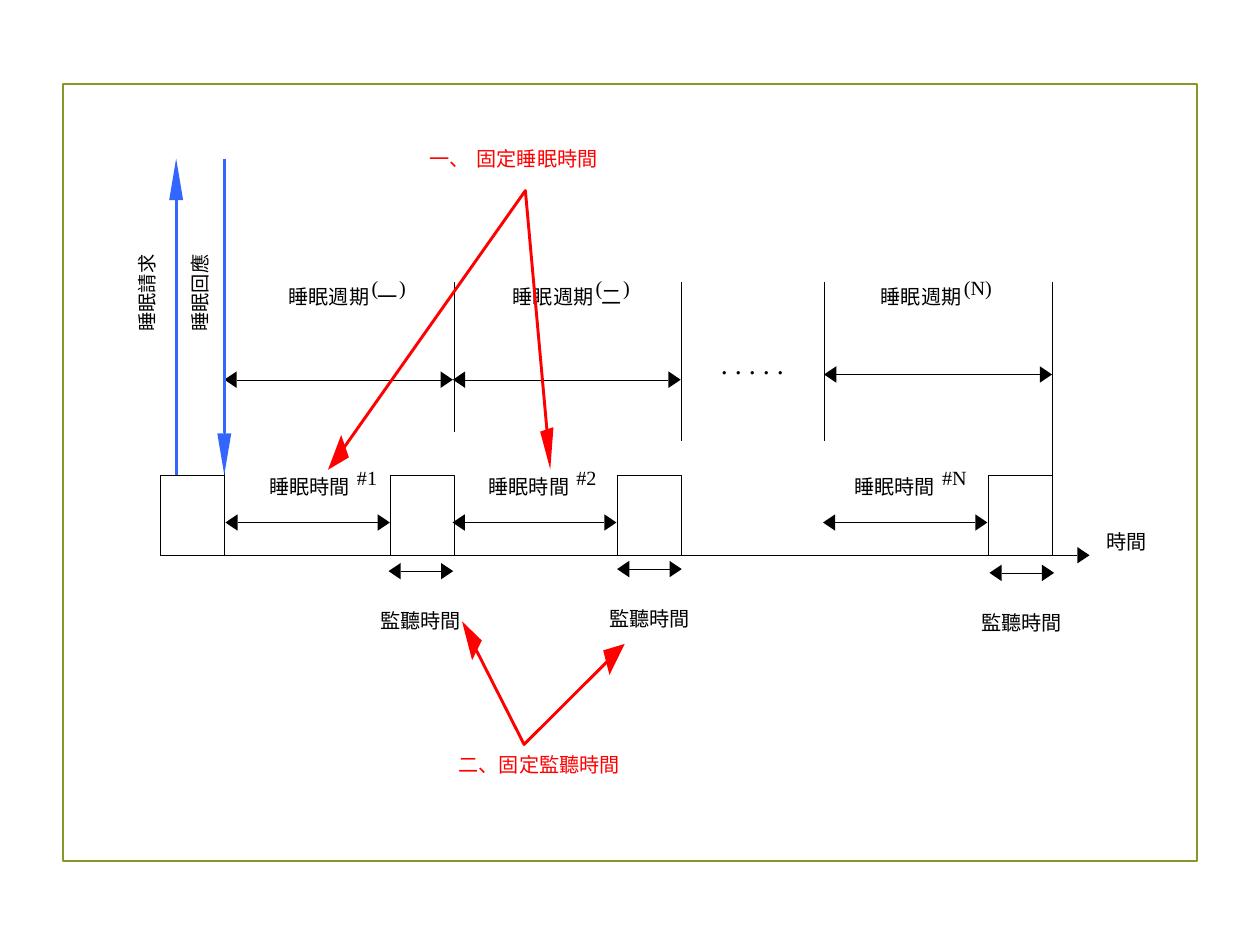
import math

import pptx
import pptx.dml.color
import pptx.enum.shapes
import pptx.oxml
import pptx.oxml.ns
import pptx.util

BLACK = "000000"
RED = "FF0000"
BLUE = "3366FF"
OLIVE = "83992A"
HAIRLINE = 0.19
BOLD_LINE = 1.67
CJK_FONT = "Calibri"
LATIN_FONT = "Times New Roman"


def pt(value):
    return pptx.util.Pt(value)


def rgb(color):
    return pptx.dml.color.RGBColor.from_string(color)


def add_outline_box(slide, left, top, width, height, color, weight):
    rectangle = pptx.enum.shapes.MSO_SHAPE.RECTANGLE
    box = slide.shapes.add_shape(rectangle, pt(left), pt(top), pt(width), pt(height))
    box.shadow.inherit = False
    box.fill.background()
    box.line.color.rgb = rgb(color)
    box.line.width = pt(weight)


def add_line(slide, start, end, color=BLACK, weight=HAIRLINE):
    straight = pptx.enum.shapes.MSO_CONNECTOR.STRAIGHT
    line = slide.shapes.add_connector(straight, *[pt(v) for v in (*start, *end)])
    line.line.color.rgb = rgb(color)
    line.line.width = pt(weight)
    line._element.spPr.append(
        pptx.oxml.parse_xml("<a:effectLst %s/>" % pptx.oxml.ns.nsdecls("a")))


def add_outline(slide, points, color, closed):
    corners = [(pt(x), pt(y)) for x, y in points]
    builder = slide.shapes.build_freeform(*corners[0], scale=1.0)
    builder.add_line_segments(corners[1:], close=closed)
    outline = builder.convert_to_shape()
    outline.shadow.inherit = False
    if closed:
        outline.fill.solid()
        outline.fill.fore_color.rgb = rgb(color)
        outline.line.fill.background()
    else:
        outline.fill.background()
        outline.line.color.rgb = rgb(color)
        outline.line.width = pt(BOLD_LINE)


def add_arrow(slide, start, end, color=BLACK, weight=HAIRLINE,
              head=(7, 4.7), double=False):
    length, half = head
    distance = math.dist(start, end)
    ux, uy = (end[0] - start[0]) / distance, (end[1] - start[1]) / distance

    def head_points(tip, sign):
        bx, by = tip[0] - sign * ux * length, tip[1] - sign * uy * length
        return [tip, (bx - uy * half, by + ux * half), (bx + uy * half, by - ux * half)]

    shaft_end = (end[0] - ux * length, end[1] - uy * length)
    shaft_start = (start[0] + ux * length, start[1] + uy * length) if double else start
    add_line(slide, shaft_start, shaft_end, color, weight)
    add_outline(slide, head_points(end, 1), color, True)
    if double:
        add_outline(slide, head_points(start, -1), color, True)


def add_label(slide, text, left, top, width, font=CJK_FONT, color=BLACK,
              size=11.5, height=31, rotation=0):
    label = slide.shapes.add_textbox(pt(left), pt(top), pt(width), pt(height))
    label.rotation = rotation
    frame = label.text_frame
    frame.word_wrap = True
    frame.margin_left = frame.margin_right = 0
    frame.margin_top = frame.margin_bottom = 0
    frame.text = text
    paragraph = frame.paragraphs[0]
    paragraph.line_spacing = 1.07
    paragraph.space_after = pt(8)
    run_font = paragraph.runs[0].font
    run_font.name = font
    run_font.size = pt(size)
    run_font.color.rgb = rgb(color)


def add_cycles(slide):
    for left, right, y, label_left in ((128.2, 258.8, 217, 164.9),
                                       (258.8, 389, 217, 293),
                                       (470.9, 601.2, 214, 503.3)):
        add_arrow(slide, (left, y), (right, y), double=True)
        add_label(slide, "睡眠週期", label_left, 161.3, 63)
    for number, left in (("一", 212.4), ("二", 340.4)):
        add_label(slide, "(", left, 156.2, 5, LATIN_FONT)
        add_label(slide, number, left + 3.6, 161.3, 16)
        add_label(slide, ")", left + 15.7, 156.2, 5, LATIN_FONT)
    add_label(slide, "(N)", 550.8, 156.2, 18, LATIN_FONT)
    for x, bottom in ((128.2, 317.3), (259.4, 247), (389, 252),
                      (470.9, 252), (601.2, 315.5)):
        add_line(slide, (x, 161.3), (x, bottom))
    add_label(slide, ". . . . .", 412, 196.6, 50, LATIN_FONT, size=16, height=59)


def add_time_axis(slide):
    for left in (91.5, 222.9, 352.4, 564.4):
        add_outline_box(slide, left, 271.4, 36.6, 45.7, BLACK, HAIRLINE)
    add_arrow(slide, (128.2, 317.3), (622.6, 317.3))
    add_label(slide, "時間", 632, 301.7, 32)


def add_sleep_times(slide):
    for number, left, right, label_left in (("#1", 128.8, 222.8, 153.8),
                                            ("#2", 258.6, 352.3, 279.2),
                                            ("#N", 470.3, 564.3, 488.2)):
        add_arrow(slide, (left, 298.6), (right, 298.6), double=True)
        add_label(slide, "睡眠時間", label_left, 270, 63)
        add_label(slide, number, label_left + 50.2, 265, 20, LATIN_FONT)


def add_listen_times(slide):
    for left, y, label_left in ((222, 326.4, 217.4),
                                (352.6, 325.2, 348),
                                (565.4, 327.4, 560.8)):
        add_arrow(slide, (left, y), (left + 37, y), double=True)
        add_label(slide, "監聽時間", label_left, y + 20.4, 63)


def add_messages(slide):
    for text, x, start, end, label_left in (("睡眠請求", 100.7, 271.4, 90.6, 52),
                                            ("睡眠回應", 128.2, 90.6, 271.4, 82.2)):
        add_arrow(slide, (x, start), (x, end), BLUE, BOLD_LINE, (23.8, 4))
        add_label(slide, text, label_left, 149, 65, size=11, height=16, rotation=270)


def add_callouts(slide):
    sleep_pointer = [(312.7, 247.7), (300.2, 108.9), (196.4, 256)]
    listen_pointer = [(347, 378), (299.5, 425.4), (271.5, 370.2)]
    for pointer in (sleep_pointer, listen_pointer):
        add_outline(slide, pointer, RED, False)
    for head in ([(316.3, 244.1), (314.5, 268.3), (308.7, 246.7)],
                 [(195, 248.6), (199.4, 261.4), (187.4, 268.5)],
                 [(357, 368), (348.3, 385.7), (344.7, 371.7)],
                 [(264, 355), (275.3, 366), (269.8, 377.2)]):
        add_outline(slide, head, RED, True)
    for text, left, top, width in (("一、", 245.5, 82.8, 32),
                                   ("固定睡眠時間", 272.4, 82.8, 94),
                                   ("二、固定監聽時間", 262.1, 429.1, 126)):
        add_label(slide, text, left, top, width, color=RED)


def main():
    deck = pptx.Presentation()
    deck.slide_width, deck.slide_height = pt(720), pt(540)
    slide = deck.slides.add_slide(deck.slide_layouts[6])
    add_outline_box(slide, 36, 48, 648, 444, OLIVE, 1.25)
    add_cycles(slide)
    add_time_axis(slide)
    add_sleep_times(slide)
    add_listen_times(slide)
    add_messages(slide)
    add_callouts(slide)
    deck.save("out.pptx")


if __name__ == "__main__":
    main()
